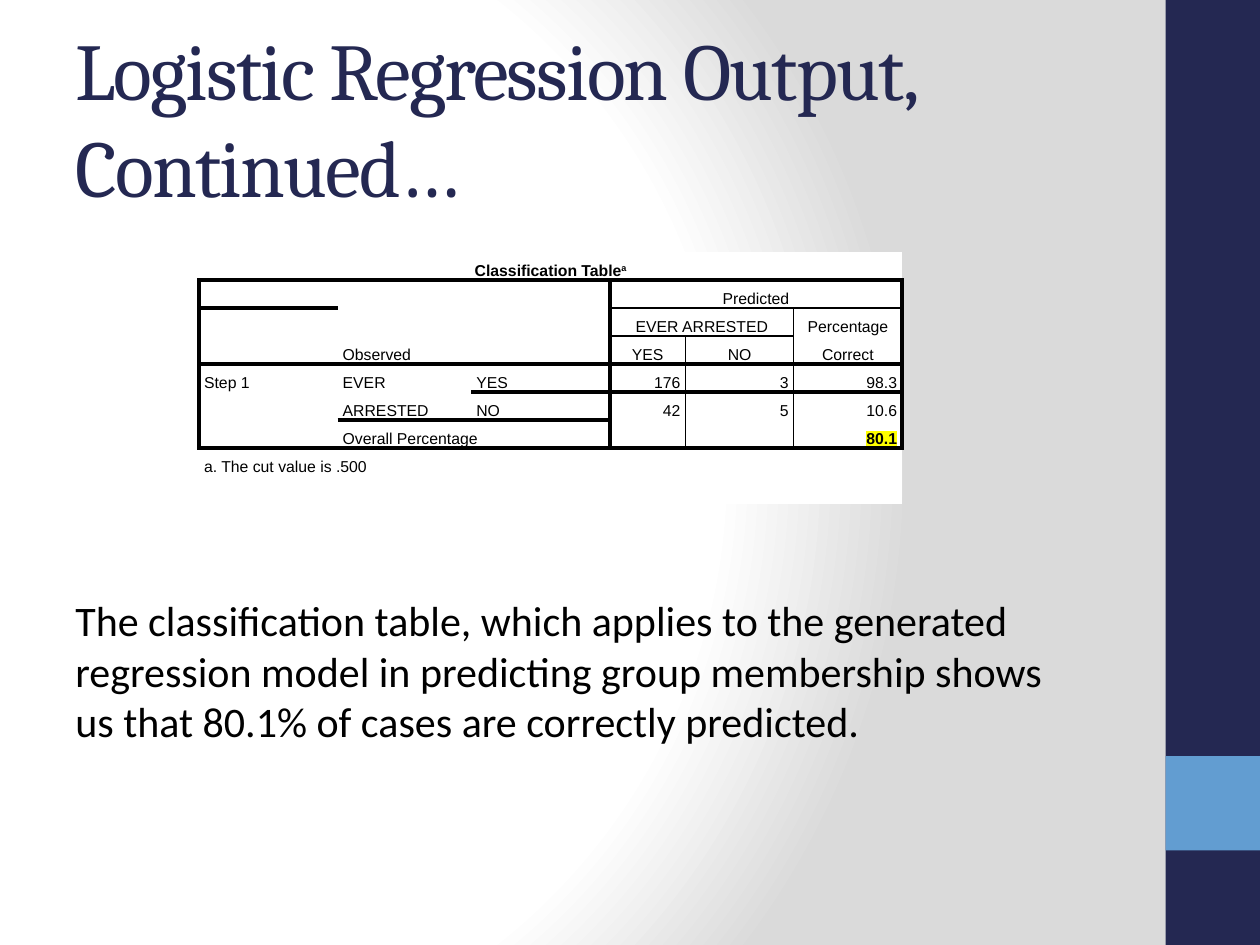
"""Slide with a logistic regression classification table and its reading."""
from lxml.etree import SubElement
from pptx import Presentation
from pptx.dml.color import RGBColor
from pptx.enum.shapes import MSO_SHAPE
from pptx.enum.text import MSO_ANCHOR as ANCHOR, PP_ALIGN as ALIGN
from pptx.oxml import parse_xml
from pptx.oxml.ns import nsdecls, qn
from pptx.util import Inches, Pt

NAVY = RGBColor(0x24, 0x28, 0x52)
BLUE = RGBColor(0x62, 0x9D, 0xD1)
BLACK = RGBColor(0, 0, 0)
WHITE = RGBColor(0xFF, 0xFF, 0xFF)
GREY = RGBColor(0xDA, 0xDA, 0xDA)
YELLOW = RGBColor(0xFF, 0xFF, 0)

TITLE = "Logistic Regression Output, Continued…"
BODY = ("The classification table, which applies to the generated regression model in "
        "predicting group membership shows us that 80.1% of cases are correctly predicted.")
BARS = [(0, 7.5, NAVY), (6, 0.75, BLUE)]
STOPS = [(0, WHITE), (75, WHITE), (100, GREY)]

COLS = [1.1, 1.06, 1.1, 0.6, 0.86, 0.86]
ROWS = [0.22] * 7 + [0.44]
L, C, R = ALIGN.LEFT, ALIGN.CENTER, ALIGN.RIGHT
TOP, MID, LOW = ANCHOR.TOP, ANCHOR.MIDDLE, ANCHOR.BOTTOM
CELLS = [
    (0, 0, 1, 6, "Classification Table", C, MID),
    (1, 1, 3, 2, "Observed", L, LOW),
    (1, 3, 1, 3, "Predicted", C, LOW),
    (2, 3, 1, 2, "EVER ARRESTED", C, LOW),
    (2, 5, 2, 1, "Percentage Correct", C, LOW),
    (3, 3, 1, 1, "YES", C, LOW),
    (3, 4, 1, 1, "NO", C, LOW),
    (4, 0, 3, 1, "Step 1", L, TOP),
    (4, 1, 2, 1, "EVER ARRESTED", L, TOP),
    (4, 2, 1, 1, "YES", L, TOP),
    (4, 3, 1, 1, "176", R, TOP),
    (4, 4, 1, 1, "3", R, TOP),
    (4, 5, 1, 1, "98.3", R, TOP),
    (5, 2, 1, 1, "NO", L, TOP),
    (5, 3, 1, 1, "42", R, TOP),
    (5, 4, 1, 1, "5", R, TOP),
    (5, 5, 1, 1, "10.6", R, TOP),
    (6, 1, 1, 2, "Overall Percentage", L, TOP),
    (6, 5, 1, 1, "80.1", R, TOP),
    (7, 0, 1, 6, "a. The cut value is .500", L, TOP),
]
BOLD = {"Classification Table", "80.1"}
THICK, THIN = 2.25, 1
H_LINES = [(1, 0, 6, THICK), (2, 3, 5, THIN), (3, 3, 5, THIN), (4, 0, 6, THICK), (7, 0, 6, THICK)]
V_LINES = [(0, 1, 7, THICK), (3, 1, 7, THICK), (4, 3, 7, THIN), (5, 2, 7, THIN), (6, 1, 7, THICK)]
NO_STYLE = "{2D5ABB26-0587-4C30-8999-92F81FD0307C}"


def add_run(p, text, font, size, color, bold=False):
    r = p.add_run()
    r.text = text
    r.font.name, r.font.size, r.font.bold = font, Pt(size), bold
    r.font.color.rgb = color
    return r


def add_text(s, box, text, font, size, color, anchor):
    tf = s.shapes.add_textbox(*map(Inches, box)).text_frame
    tf.word_wrap = True
    tf.vertical_anchor = anchor
    return add_run(tf.paragraphs[0], text, font, size, color)


def add_background(s):
    stops = "".join(f'<a:gs pos="{pos * 1000}"><a:srgbClr val="{color}"/></a:gs>'
                    for pos, color in STOPS)
    s.background.fill.solid()
    bg = s._element.cSld.find(qn("p:bg")).find(qn("p:bgPr"))
    bg.replace(bg[0], parse_xml(
        f'<a:gradFill {nsdecls("a")} rotWithShape="1"><a:gsLst>{stops}</a:gsLst>'
        '<a:path path="circle"><a:fillToRect l="20000" t="50000" r="100000" b="50000"/>'
        '</a:path></a:gradFill>'))


def set_borders(cell, widths):
    tcPr = cell._tc.get_or_add_tcPr()
    lines = [(side, w) for side, w in zip("LRTB", widths) if w]
    for i, (side, w) in enumerate(lines):
        tcPr.insert(i, parse_xml(
            f'<a:ln{side} {nsdecls("a")} w="{Pt(w)}"><a:solidFill>'
            f'<a:srgbClr val="{BLACK}"/></a:solidFill></a:ln{side}>'))


def fill_cell(cell, text, align, anchor):
    cell.vertical_anchor = anchor
    p = cell.text_frame.paragraphs[0]
    p.alignment = align
    r = add_run(p, text, "Arial", 9, BLACK, text in BOLD)
    if text == "Classification Table":
        note = add_run(p, "a", "Arial", 9, BLACK, True)
        note._r.get_or_add_rPr().set("baseline", "30000")
    if text == "80.1":
        mark = parse_xml(f'<a:highlight {nsdecls("a")}><a:srgbClr val="{YELLOW}"/></a:highlight>')
        r._r.rPr.find(qn("a:solidFill")).addnext(mark)


def add_classification_table(s):
    table = s.shapes.add_table(len(ROWS), len(COLS), Inches(1.58), Inches(2),
                               Inches(sum(COLS)), Inches(sum(ROWS))).table
    table.first_row = table.horz_banding = False
    table._tbl.tblPr.find(qn("a:tableStyleId")).text = NO_STYLE
    for col, width in zip(table.columns, COLS):
        col.width = Inches(width)
    for row, height in zip(table.rows, ROWS):
        row.height = Inches(height)
    for r, c, height, width, *_ in CELLS:
        if height * width > 1:
            table.cell(r, c).merge(table.cell(r + height - 1, c + width - 1))

    across = {(y, c): w for y, start, end, w in H_LINES for c in range(start, end)}
    down = {(r, x): w for x, start, end, w in V_LINES for r in range(start, end)}
    for r in range(len(ROWS)):
        for c in range(len(COLS)):
            cell = table.cell(r, c)
            cell.margin_left = cell.margin_right = cell.margin_top = cell.margin_bottom = 0
            cell.fill.solid()
            cell.fill.fore_color.rgb = WHITE
            right = c + (cell.span_width if cell.is_merge_origin else 1)
            bottom = r + (cell.span_height if cell.is_merge_origin else 1)
            set_borders(cell, (down.get((r, c)), down.get((r, right)),
                               across.get((r, c)), across.get((bottom, c))))
            p = cell.text_frame.paragraphs[0]
            p.line_spacing = Pt(16)
            p.font.size = Pt(9)
            pPr = p._p.get_or_add_pPr()
            for side in ("marL", "marR"):
                pPr.set(side, str(Inches(0.04)))
            SubElement(p._p, qn("a:endParaRPr")).set("sz", "900")
    for r, c, _, _, text, align, anchor in CELLS:
        fill_cell(table.cell(r, c), text, align, anchor)


def main():
    prs = Presentation()
    prs.slide_width, prs.slide_height = Inches(10), Inches(7.5)
    s = prs.slides.add_slide(prs.slide_layouts[6])
    add_background(s)
    for top, height, color in BARS:
        sp = s.shapes.add_shape(MSO_SHAPE.RECTANGLE, Inches(9.25), Inches(top),
                                Inches(0.75), Inches(height))
        sp.shadow.inherit = False
        sp.fill.solid()
        sp.fill.fore_color.rgb = color
        sp.line.fill.background()
    title = add_text(s, (0.5, 0.3, 8.33, 1.25), TITLE, "Cambria", 46, NAVY, MID)
    title._r.get_or_add_rPr().set("spc", "-100")
    add_classification_table(s)
    add_text(s, (0.5, 4.67, 8.2, 1.31), BODY, "Calibri", 24, BLACK, TOP)
    prs.save("out.pptx")


if __name__ == "__main__":
    main()
